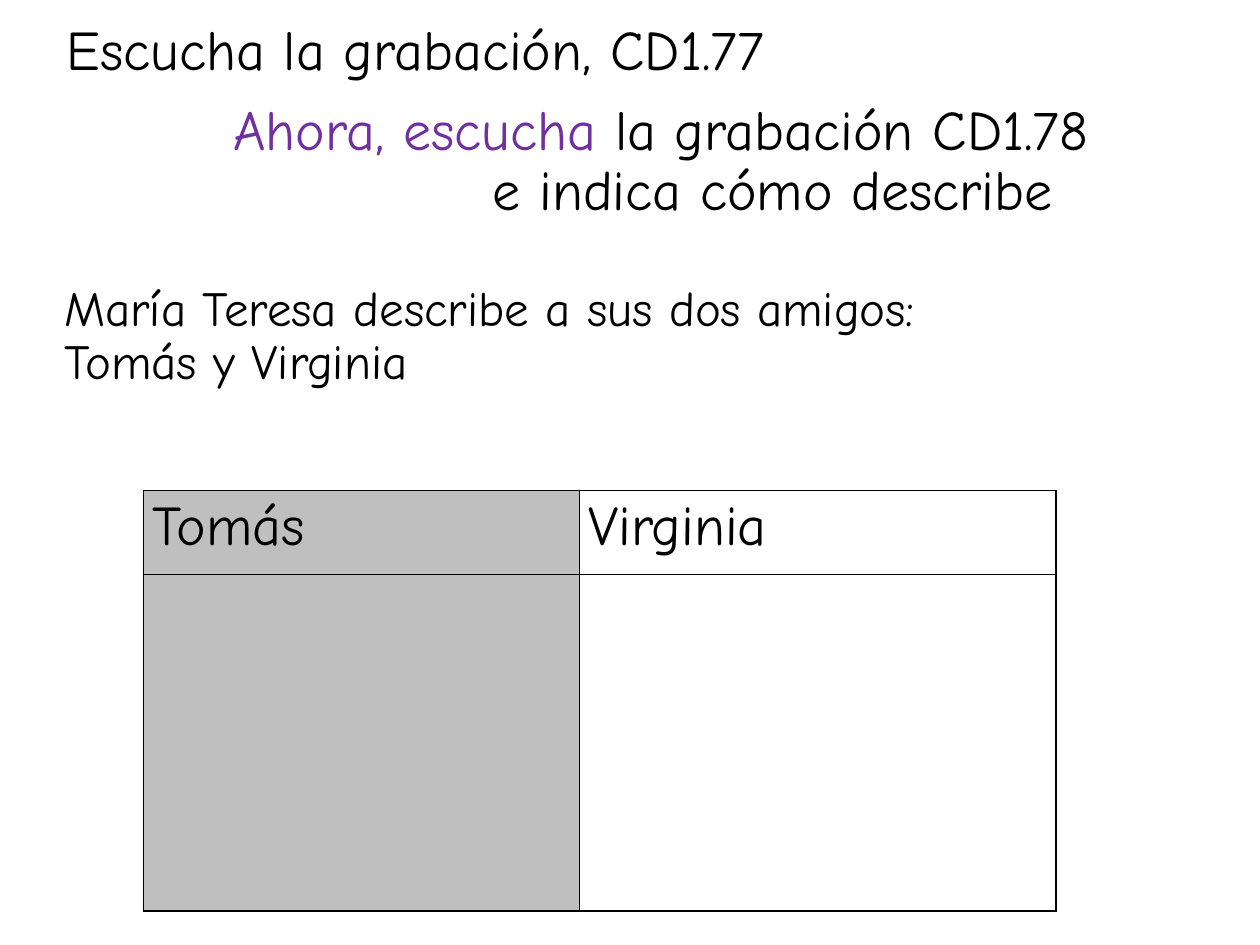
from lxml import etree
from pptx import Presentation
from pptx import util as u
from pptx.dml.color import RGBColor
from pptx.enum import text
from pptx.oxml import ns

COLORS = {"ink": "000000", "accent": "7030A0", "shade": "BFBFBF"}
FONT = "Comic Neue"

prs = Presentation()
prs.slide_width, prs.slide_height = u.Inches(10), u.Inches(7.5)
col, row = prs.slide_width / 100, prs.slide_height / 100  # grid of 100 by 100
slide = prs.slides.add_slide(prs.slide_layouts[5])


def style(run, size, color="ink"):
    run.font.name = FONT
    run.font.size = u.Pt(size)
    run.font.color.rgb = RGBColor.from_string(COLORS[color])


def add_border(cell):
    properties = cell._tc.get_or_add_tcPr()
    for position, side in enumerate(("lnL", "lnR", "lnT", "lnB")):
        line = etree.Element(ns.qn(f"a:{side}"), w=str(u.Pt(1)))
        fill = etree.SubElement(line, ns.qn("a:solidFill"))
        etree.SubElement(fill, ns.qn("a:srgbClr"), val=COLORS["ink"])
        properties.insert(position, line)


# Instructions: left indent in columns, space before, size, coloured runs
instructions = [
    (13.4, 0, 32, [("Ahora, escucha", "accent"), (" la grabación CD1.78", "ink")]),
    (34, 0, 32, [("e indica cómo describe", "ink")]),
    (0, 35, 28, [("María Teresa describe a sus dos amigos:", "ink")]),
    (0, 0, 28, [("Tomás y Virginia", "ink")]),
]
title = slide.shapes.title
title.left, title.top = int(4.1 * col), int(10.1 * row)
title.width, title.height = int(92 * col), int(34 * row)
frame = title.text_frame
frame.word_wrap = True
frame.auto_size = text.MSO_AUTO_SIZE.NONE
frame.vertical_anchor = text.MSO_ANCHOR.TOP
frame.text = "\n".join("".join(part for part, _ in line[3]) for line in instructions)
for paragraph, (indent, before, size, parts) in zip(frame.paragraphs, instructions):
    paragraph.text = ""
    paragraph.alignment = text.PP_ALIGN.LEFT
    paragraph.line_spacing = 0.9
    paragraph.space_before = u.Pt(before)
    properties = paragraph._p.get_or_add_pPr()
    properties.set("marL", str(int(indent * col)))
    properties.set("indent", "0")
    for part, color in parts:
        run = paragraph.add_run()
        run.text = part
        style(run, size, color)

# Table of the two friends
friends = ["Tomás", "Virginia"]
column_widths = [34.6, 37.8]
row_heights = [8.9, 35.6]
table = slide.shapes.add_table(
    len(row_heights), len(friends), int(11.4 * col), int(51.9 * row),
    int(sum(column_widths) * col), int(sum(row_heights) * row),
).table
table.first_row = table.horz_banding = False
for table_column, width in zip(table.columns, column_widths):
    table_column.width = int(width * col)
for table_row, height in zip(table.rows, row_heights):
    table_row.height = int(height * row)
    for cell, friend in zip(table_row.cells, friends):
        cell.margin_left = cell.margin_right = u.Inches(0.07)
        cell.margin_top = cell.margin_bottom = 0
        if friend == "Tomás":
            cell.fill.solid()
            cell.fill.fore_color.rgb = RGBColor.from_string(COLORS["shade"])
        else:
            cell.fill.background()
        add_border(cell)
for cell, friend in zip(table.rows[0].cells, friends):
    heading = cell.text_frame.paragraphs[0]
    heading.text = friend
    heading.line_spacing = 1.07
    style(heading.runs[0], 32)

# First listening task
first_task = slide.shapes.add_textbox(
    int(4.3 * col), int(1.7 * row), int(85.1 * col), int(7.9 * row))
first_task.text_frame.word_wrap = True
first_task.text_frame.auto_size = text.MSO_AUTO_SIZE.SHAPE_TO_FIT_TEXT
task = first_task.text_frame.paragraphs[0]
task.text = "Escucha la grabación, CD1.77"
task.line_spacing = 0.9
task.space_before = u.Pt(7.5)
style(task.runs[0], 32)

prs.save("out.pptx")
